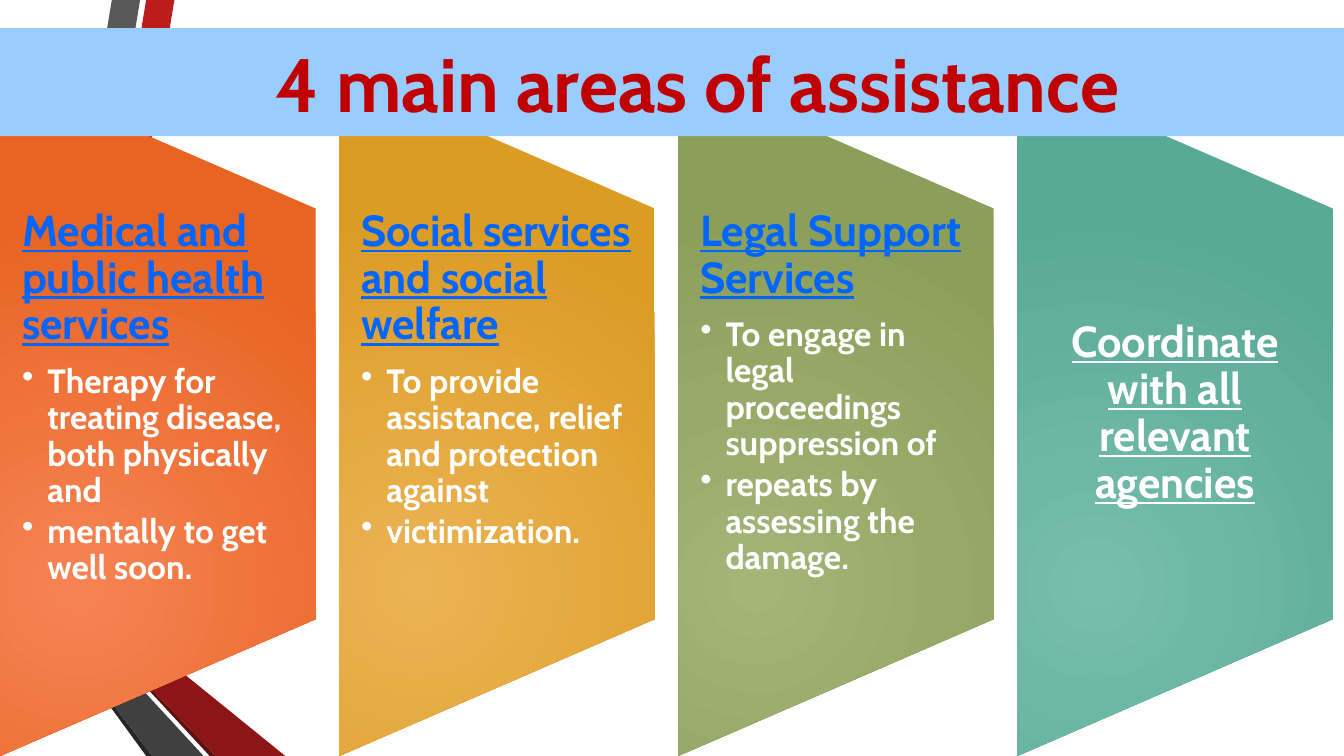
from typing import NamedTuple

from lxml import etree
from pptx import Presentation
from pptx.dml.color import RGBColor
from pptx.enum.shapes import MSO_SHAPE
from pptx.enum.text import MSO_ANCHOR, PP_ALIGN
from pptx.oxml import parse_xml
from pptx.oxml.ns import qn
from pptx.util import Inches, Pt

BANNER = MSO_SHAPE.RECTANGLE
PANEL = MSO_SHAPE.FLOWCHART_MANUAL_OPERATION
TOP, MIDDLE = MSO_ANCHOR.TOP, MSO_ANCHOR.MIDDLE
LEFT, CENTER = PP_ALIGN.LEFT, PP_ALIGN.CENTER
FONT = "Cabin"
BLUE, RED, WHITE = "0066FF", "C00000", "FFFFFF"
WIDE, TALL, STEP = 3.13, 6.79, 3.363
DRAWING = "http://schemas.openxmlformats.org/drawingml/2006/main"


class Stripe(NamedTuple):
    color: str
    points: list[tuple[float, float]]


class Area(NamedTuple):
    title: str
    items: list[str]
    inner: str
    outer: str
    ink: str = BLUE
    anchor: MSO_ANCHOR = TOP
    align: PP_ALIGN = LEFT


STRIPES = [
    Stripe("BC1C1C", [(0.5, 5.78), (0.77, 5.83), (1.73, 0), (1.45, 0)]),
    Stripe("595959", [(1.39, 0), (1.11, 0), (0.16, 5.73), (0.44, 5.77)]),
    Stripe("262626", [(0.16, 5.73), (1.45, 7.5), (1.51, 7.5)]),
    Stripe("5E0E0E", [(0.5, 5.79), (2.08, 7.5), (2.14, 7.5)]),
    Stripe("8D1515", [(0.5, 5.79), (2.14, 7.5), (2.83, 7.5), (0.77, 5.83), (0.5, 5.78)]),
    Stripe("404040", [(2.02, 7.5), (0.48, 5.83), (0.43, 5.77), (0.16, 5.73), (1.51, 7.5)]),
]

AREAS = [
    Area("Medical and public health services",
         ["Therapy for treating disease, both physically and",
          "mentally to get well soon."], "F78354", "E76422"),
    Area("Social services and social welfare",
         ["To provide assistance, relief and protection against",
          "victimization."], "ECB354", "DB9C24"),
    Area("Legal Support Services",
         ["To engage in legal proceedings suppression of",
          "repeats by assessing the damage."], "A3B577", "8B9E5A"),
    Area("Coordinate with all relevant agencies", [],
         "78BEAD", "58A996", WHITE, MIDDLE, CENTER),
]


def rgb(color: str) -> RGBColor:
    return RGBColor.from_string(color)


def paint(shape, color: str) -> None:
    shape.shadow.inherit = False
    shape.fill.solid()
    shape.fill.fore_color.rgb = rgb(color)
    shape.line.fill.background()


def glow(shape, inner: str, outer: str) -> None:
    paint(shape, outer)
    solid = shape._element.spPr.find(qn("a:solidFill"))
    grad = parse_xml(
        f'<a:gradFill xmlns:a="{DRAWING}" rotWithShape="1"><a:gsLst>'
        f'<a:gs pos="0"><a:srgbClr val="{inner}"/></a:gs>'
        f'<a:gs pos="100000"><a:srgbClr val="{outer}"/></a:gs></a:gsLst>'
        '<a:path path="circle"><a:fillToRect l="50000" t="100000" '
        'r="100000" b="50000"/></a:path></a:gradFill>')
    solid.getparent().replace(solid, grad)


def style(para, size: float, color: str, line: bool = False) -> None:
    for run in para.runs:
        font = run.font
        font.name, font.size, font.bold = FONT, Pt(size), True
        font.underline = line
        font.color.rgb = rgb(color)


def space(para, size: float, share: float) -> None:
    para.line_spacing = 0.9
    para.space_after = Pt(round(size * share, 1))


def bullet(para) -> None:
    props = para._p.get_or_add_pPr()
    props.set("marL", str(Inches(0.25)))
    props.set("indent", str(-Inches(0.25)))
    etree.SubElement(props, qn("a:buChar")).set("char", "•")


def draw_stripe(slide, stripe: Stripe) -> None:
    start, *rest = [(Inches(x), Inches(y)) for x, y in stripe.points]
    form = slide.shapes.build_freeform(*start)
    form.add_line_segments(rest, close=True)
    paint(form.convert_to_shape(), stripe.color)


def draw_area(slide, area: Area, left: float) -> None:
    panel = slide.shapes.add_shape(
        PANEL, Inches(left + (WIDE - TALL) / 2), Inches(7.5 - (TALL + WIDE) / 2),
        Inches(TALL), Inches(WIDE))
    panel.rotation = 270
    glow(panel, area.inner, area.outer)

    box = slide.shapes.add_textbox(Inches(left), Inches(2.07), Inches(WIDE), Inches(4.07))
    frame = box.text_frame
    frame.word_wrap = True
    frame.vertical_anchor = area.anchor
    frame.margin_left = frame.margin_right = Inches(0.22)
    frame.margin_top = frame.margin_bottom = 0
    head = frame.paragraphs[0]
    head.text = area.title
    head.alignment = area.align
    space(head, 31, 0.35)
    style(head, 31, area.ink, True)
    for item in area.items:
        para = frame.add_paragraph()
        para.text = item
        para.level = 1
        bullet(para)
        space(para, 24, 0.15)
        style(para, 24, WHITE)


def draw_title(slide, text: str) -> None:
    bar = slide.shapes.add_shape(BANNER, 0, Inches(0.28), Inches(13.33), Inches(1.07))
    paint(bar, "99CCFF")
    frame = bar.text_frame
    frame.word_wrap = True
    frame.vertical_anchor = MIDDLE
    frame.margin_left = Inches(0.6)
    frame.text = text
    para = frame.paragraphs[0]
    para.alignment = CENTER
    style(para, 54, RED)


def main() -> None:
    deck = Presentation()
    deck.slide_width, deck.slide_height = Inches(13.33), Inches(7.5)
    slide = deck.slides.add_slide(deck.slide_layouts[6])
    for stripe in STRIPES:
        draw_stripe(slide, stripe)
    for i, area in enumerate(AREAS):
        draw_area(slide, area, i * STEP)
    draw_title(slide, "4 main areas of assistance")
    deck.save("out.pptx")


if __name__ == "__main__":
    main()
